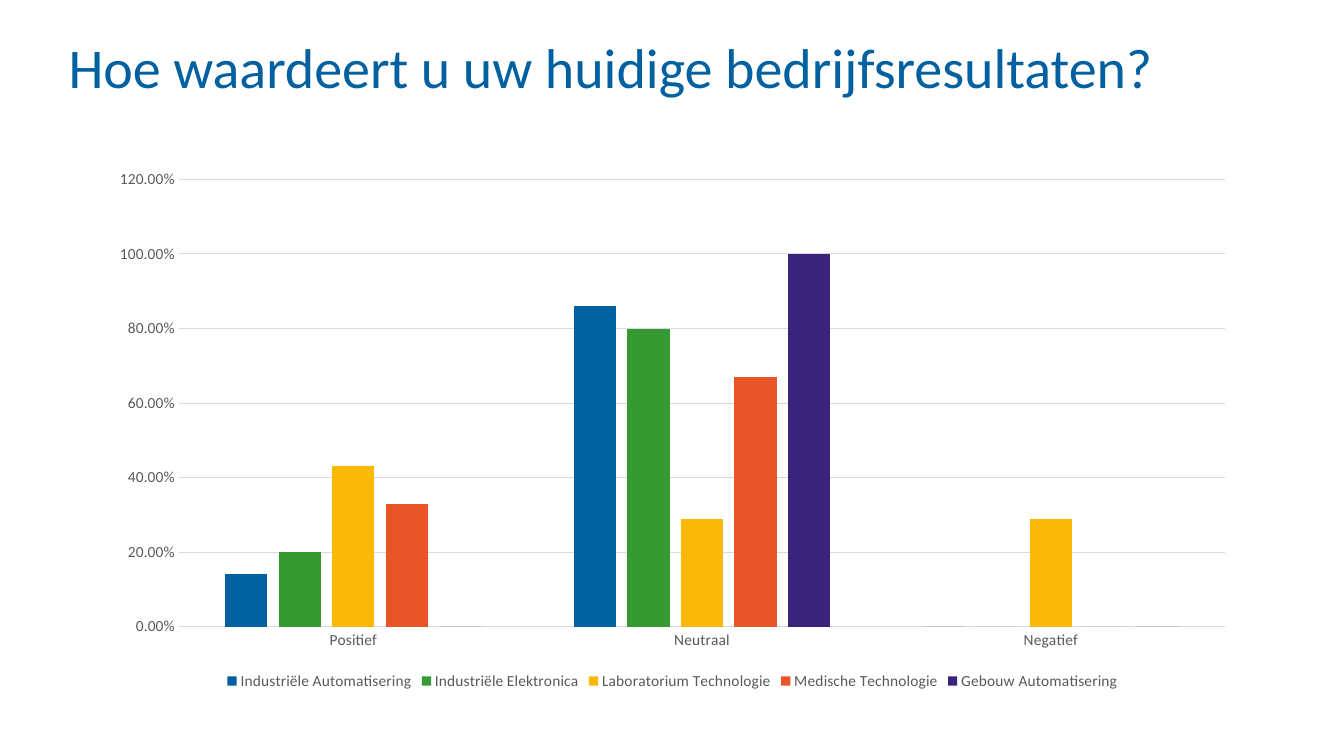
"""Build a slide with a clustered column chart of business results by sector."""
from pptx import Presentation
from pptx.chart.data import CategoryChartData
from pptx.dml.color import RGBColor
from pptx.enum import chart as ch, text
from pptx.util import Inches, Pt

TITLE = "Hoe waardeert u uw huidige bedrijfsresultaten?"
CATEGORIES = ["Positief", "Neutraal", "Negatief"]
SERIES = [
    ("Industriële Automatisering", "blue", (0.14, 0.86, 0)),
    ("Industriële Elektronica", "green", (0.2, 0.8, 0)),
    ("Laboratorium Technologie", "yellow", (0.43, 0.29, 0.29)),
    ("Medische Technologie", "orange", (0.33, 0.67, 0)),
    ("Gebouw Automatisering", "purple", (0, 1, 0)),
]
COLORS = {
    "blue": "0060A0", "green": "359A32", "yellow": "FAB907",
    "orange": "E95527", "purple": "3A237B",
    "label": "595959", "rule": "D9D9D9",
}
FONT = "Calibri"
TITLE_BOX = (0.68, 0.4, 11.26, 0.76)
CHART_BOX = (0.96, 1.58, 11.42, 5.31)


def rgb(name):
    return RGBColor.from_string(COLORS[name])


def style_font(font, size, color):
    font.name, font.size = FONT, Pt(size)
    font.color.rgb = rgb(color)


def style_line(line):
    line.color.rgb = rgb("rule")
    line.width = Pt(0.75)


def add_title(s):
    tf = s.shapes.add_textbox(*map(Inches, TITLE_BOX)).text_frame
    tf.word_wrap = True
    tf.vertical_anchor = text.MSO_ANCHOR.TOP
    tf.margin_left = tf.margin_right = tf.margin_top = tf.margin_bottom = 0
    p = tf.paragraphs[0]
    p.line_spacing = 0.9
    r = p.add_run()
    r.text = TITLE
    style_font(r.font, 40, "blue")


def add_results_chart(s):
    data = CategoryChartData(number_format="0.00%")
    data.categories = CATEGORIES
    for name, _, values in SERIES:
        data.add_series(name, values)
    chart = s.shapes.add_chart(
        ch.XL_CHART_TYPE.COLUMN_CLUSTERED, *map(Inches, CHART_BOX), data
    ).chart
    chart.has_title = False
    style_font(chart.font, 11, "label")

    chart.has_legend = True
    chart.legend.position = ch.XL_LEGEND_POSITION.BOTTOM
    chart.legend.include_in_layout = False
    style_font(chart.legend.font, 11, "label")

    for axis in (chart.category_axis, chart.value_axis):
        axis.major_tick_mark = axis.minor_tick_mark = ch.XL_TICK_MARK.NONE
        style_font(axis.tick_labels.font, 11, "label")
    style_line(chart.category_axis.format.line)
    values = chart.value_axis
    values.minimum_scale, values.maximum_scale, values.major_unit = 0, 1.2, 0.2
    values.format.line.fill.background()
    values.has_major_gridlines = True
    style_line(values.major_gridlines.format.line)
    values.tick_labels.number_format = "0.00%"
    values.tick_labels.number_format_is_linked = False

    plot = chart.plots[0]
    plot.gap_width, plot.overlap = 219, -27
    plot.vary_by_categories = False
    for series, (_, color, _) in zip(plot.series, SERIES):
        series.invert_if_negative = False
        series.format.fill.solid()
        series.format.fill.fore_color.rgb = rgb(color)


def main():
    prs = Presentation()
    prs.slide_width, prs.slide_height = Inches(13.33), Inches(7.5)
    s = prs.slides.add_slide(prs.slide_layouts[6])
    add_title(s)
    add_results_chart(s)
    prs.save("out.pptx")


if __name__ == "__main__":
    main()
